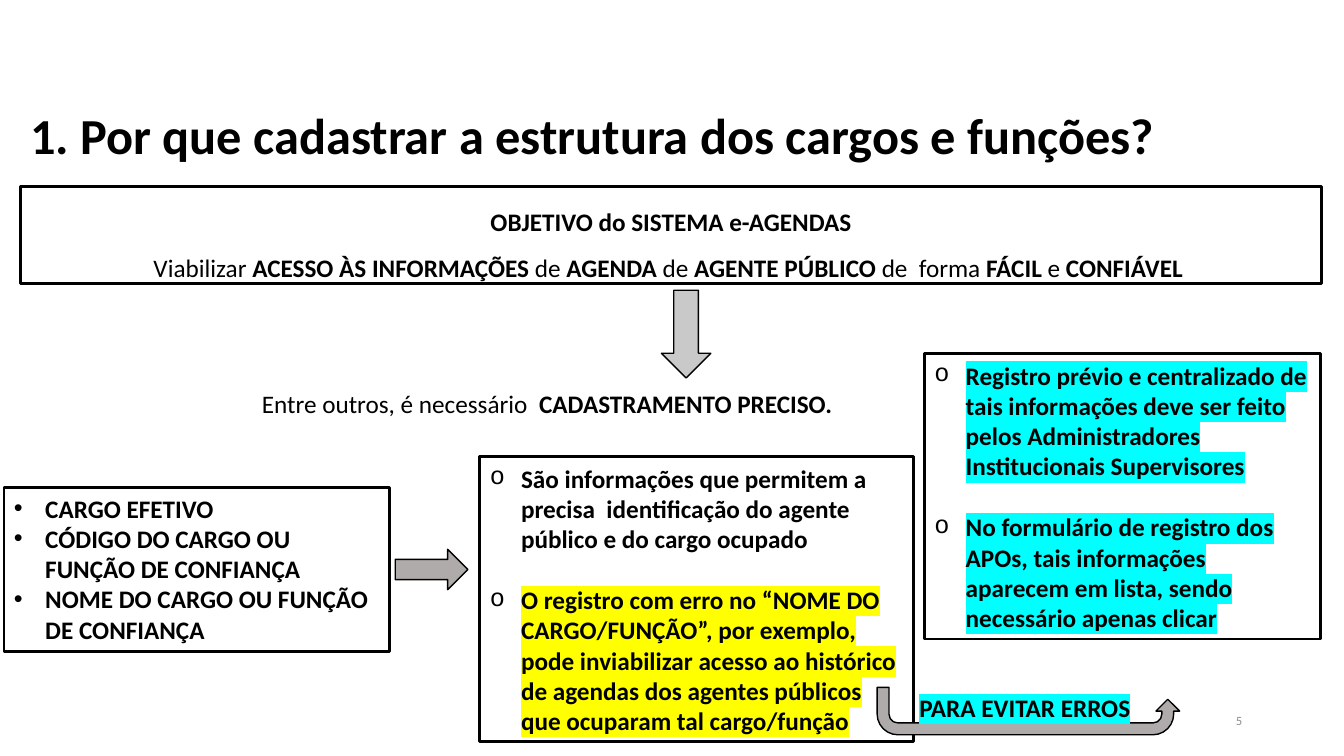
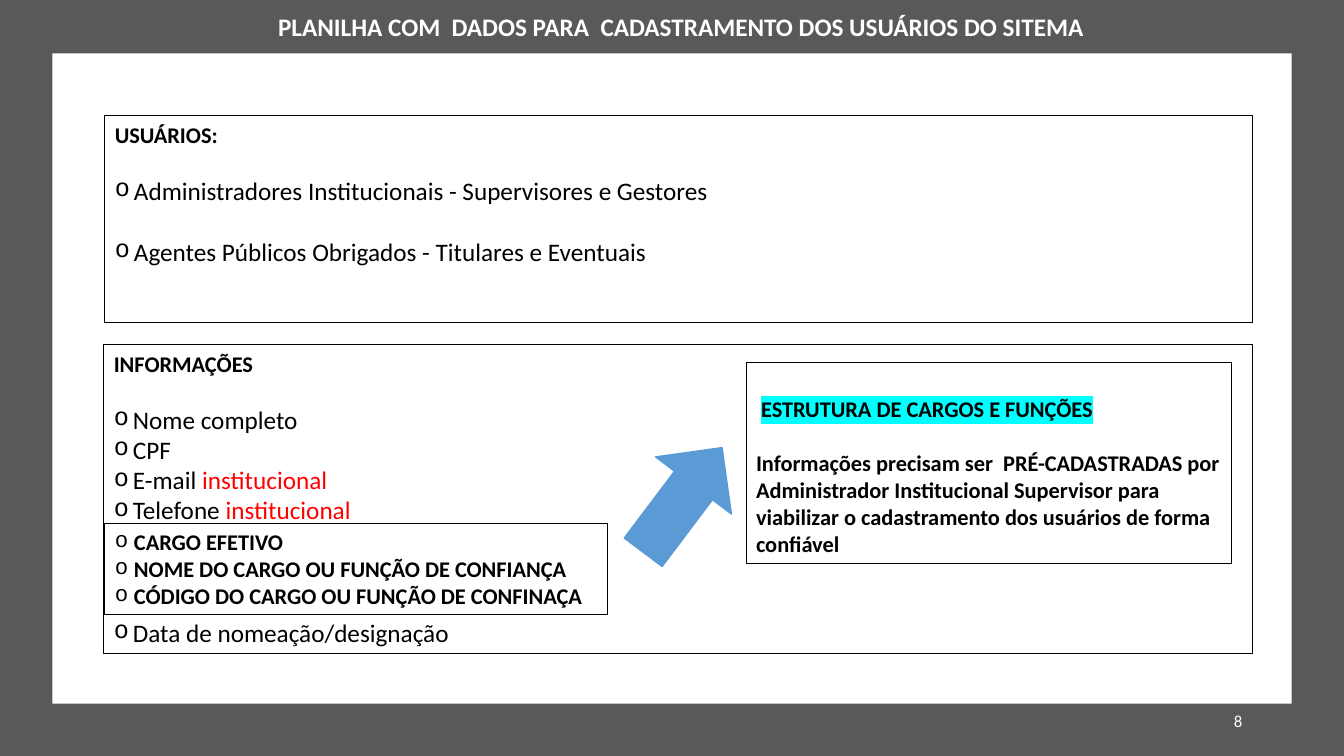
from lxml import etree
from pptx import Presentation
from pptx.dml.color import RGBColor
from pptx.enum.shapes import MSO_SHAPE
from pptx.enum.text import MSO_ANCHOR, PP_ALIGN
from pptx.oxml.ns import qn
from pptx.util import Inches, Pt

LEFT, CENTER, RIGHT = PP_ALIGN.LEFT, PP_ALIGN.CENTER, PP_ALIGN.RIGHT
TOP, MIDDLE = MSO_ANCHOR.TOP, MSO_ANCHOR.MIDDLE
RECTANGLE = MSO_SHAPE.RECTANGLE
DOWN_ARROW, RIGHT_ARROW, UTURN_ARROW = MSO_SHAPE.DOWN_ARROW, MSO_SHAPE.RIGHT_ARROW, MSO_SHAPE.U_TURN_ARROW

FONT = "Calibri"
BLACK, WHITE, RED = "000000", "FFFFFF", "FF0000"
YELLOW, CYAN = "FFFF00", "00FFFF"
DARK, LIGHT_GRAY, GRAY, NUMBER_GRAY, BLUE = "595959", "C9C9C9", "AFABAB", "8C8C8C", "5B9BD5"
THICK, THIN = 2, 0.75
WIDE_INDENT, NARROW_INDENT = 0.31, 0.19
LINE_16, LINE_18 = 19.5, 22
NUMBER_BOX = (9.42, 6.95, 3, 0.4)

BOLD = {"bold": True}
BOLD_16 = {"bold": True, "size": 16}
BOLD_CYAN = {"bold": True, "highlight": CYAN}
BOLD_YELLOW = {"bold": True, "highlight": YELLOW}


def line(*runs, **layout):
    return runs, layout


def bullet(*runs, mark="o", indent=NARROW_INDENT, **layout):
    return runs, {"mark": mark, "indent": indent, **layout}


OBJECTIVE = [
    line(("OBJETIVO do SISTEMA e-AGENDAS", BOLD), align=CENTER, spacing=1.5),
    line(("Viabilizar ", {}), ("ACESSO ÀS INFORMAÇÕES ", BOLD), ("de ", {}),
         ("AGENDA", BOLD), (" de ", {}), ("AGENTE PÚBLICO ", BOLD),
         ("de  forma ", {}), ("FÁCIL ", BOLD), ("e ", {}), ("CONFIÁVEL ", BOLD),
         align=CENTER, spacing=1.5),
]
NEED = [line(("Entre outros, é necessário  ", {}), ("CADASTRAMENTO PRECISO. ", BOLD), align=CENTER)]
POSITION_FIELDS = [
    bullet((text, BOLD), mark="•", indent=WIDE_INDENT)
    for text in ("CARGO EFETIVO", "CÓDIGO DO CARGO OU FUNÇÃO DE CONFIANÇA",
                 "NOME DO CARGO OU FUNÇÃO DE CONFIANÇA")
]
IDENTIFICATION = [
    bullet(("São informações que permitem a precisa  identificação do agente público e do cargo ocupado", BOLD),
           indent=WIDE_INDENT),
    bullet(("O registro com erro no “NOME DO CARGO/FUNÇÃO”, por exemplo, pode inviabilizar acesso ao "
            "histórico de agendas dos agentes públicos que ocuparam tal cargo/função", BOLD_YELLOW),
           indent=WIDE_INDENT, before=LINE_18),
]
REGISTRATION = [
    bullet(("Registro prévio e centralizado de tais informações deve ser feito pelos Administradores "
            "Institucionais Supervisores", BOLD_CYAN), indent=WIDE_INDENT),
    bullet(("No formulário de registro dos APOs, tais informações aparecem em lista, sendo necessário "
            "apenas clicar", BOLD_CYAN), indent=WIDE_INDENT, before=LINE_18),
]
AVOID_ERRORS = [line(("PARA EVITAR ERROS", BOLD_CYAN), align=CENTER)]

USERS = [
    line(("USUÁRIOS:", BOLD_16)),
    bullet(("Administradores Institucionais - Supervisores e Gestores", {}), before=LINE_16),
    bullet(("Agentes Públicos Obrigados - Titulares e Eventuais", {}), before=LINE_18),
]
INFORMATION = [
    line(("INFORMAÇÕES", BOLD_16)),
    bullet(("Nome completo", {}), before=LINE_16),
    bullet(("CPF", {})),
    bullet(("E-mail ", {}), ("institucional", {"color": RED})),
    bullet(("Telefone ", {}), ("institucional", {"color": RED})),
    bullet(("Data de nomeação/designação", {}), before=3 * LINE_18),
]
POSITION_DATA = [
    bullet((text, BOLD_16))
    for text in ("CARGO EFETIVO", "NOME DO CARGO OU FUNÇÃO DE CONFIANÇA",
                 "CÓDIGO DO CARGO OU FUNÇÃO DE CONFINAÇA")
]
STRUCTURE = [
    line(("ESTRUTURA DE CARGOS E FUNÇÕES", {**BOLD_16, "highlight": CYAN}), margin=0.05),
    line(("Informações precisam ser  PRÉ-CADASTRADAS por Administrador Institucional Supervisor para "
          "viabilizar o cadastramento dos usuários de forma confiável", BOLD_16), before=LINE_16),
]


def rgb(value):
    return RGBColor.from_string(value)


def box(position):
    return [Inches(value) for value in position]


def set_bullet(properties, mark, indent):
    properties.set("marL", str(Inches(indent)))
    properties.set("indent", str(-Inches(indent)))
    font = etree.SubElement(properties, qn("a:buFont"))
    font.set("typeface", "Courier New" if mark == "o" else "Arial")
    etree.SubElement(properties, qn("a:buChar")).set("char", mark)


def add_run(paragraph, text, size=18, bold=False, color=BLACK, highlight=None):
    run = paragraph.add_run()
    run.text = text
    run.font.size, run.font.bold = Pt(size), bold
    run.font.color.rgb = rgb(color)
    run.font.name = FONT
    if highlight:
        marker = etree.Element(qn("a:highlight"))
        etree.SubElement(marker, qn("a:srgbClr")).set("val", highlight)
        run.font._element.find(qn("a:solidFill")).addnext(marker)


def write(shape, lines, anchor=TOP, wrap=True, top_margin=0.05):
    frame = shape.text_frame
    frame.word_wrap, frame.vertical_anchor = wrap, anchor
    frame.margin_top = Inches(top_margin)
    for index, (runs, layout) in enumerate(lines):
        paragraph = frame.add_paragraph() if index else frame.paragraphs[0]
        properties = paragraph._p.get_or_add_pPr()
        if "mark" in layout:
            set_bullet(properties, layout["mark"], layout["indent"])
        if "margin" in layout:
            properties.set("marL", str(Inches(layout["margin"])))
        paragraph.alignment = layout.get("align", LEFT)
        if "spacing" in layout:
            paragraph.line_spacing = layout["spacing"]
        if "before" in layout:
            paragraph.space_before = Pt(layout["before"])
        for text, style in runs:
            add_run(paragraph, text, **style)


def add_figure(slide, kind, position, fill=None, outline=None, width=1):
    shape = slide.shapes.add_shape(kind, *box(position))
    shape.shadow.inherit = False
    if fill:
        shape.fill.solid()
        shape.fill.fore_color.rgb = rgb(fill)
    else:
        shape.fill.background()
    if outline:
        shape.line.color.rgb = rgb(outline)
        shape.line.width = Pt(width)
    else:
        shape.line.fill.background()
    return shape


def add_panel(slide, position, lines, width, **options):
    write(add_figure(slide, RECTANGLE, position, outline=BLACK, width=width), lines, **options)


def add_text(slide, position, lines, **options):
    write(slide.shapes.add_textbox(*box(position)), lines, **options)


def add_number(slide, number, size, color):
    add_text(slide, NUMBER_BOX, [line((number, {"size": size, "color": color}), align=RIGHT)], anchor=MIDDLE)


def build_reasons(slide):
    add_number(slide, "5", 9, NUMBER_GRAY)
    add_panel(slide, (0.2, 1.85, 12.91, 0.96), OBJECTIVE, THICK)
    title = ("1. Por que cadastrar a estrutura dos cargos e funções?", {"size": 36, "bold": True})
    add_text(slide, (0.2, 1.07, 11.54, 0.6), [line(title, spacing=0.9)], anchor=MIDDLE)
    add_text(slide, (1.49, 3.8, 7.93, 0.4), NEED)
    add_panel(slide, (0.04, 4.84, 3.82, 1.62), POSITION_FIELDS, THICK)
    add_figure(slide, DOWN_ARROW, (6.56, 2.88, 0.49, 0.87), LIGHT_GRAY, BLACK)
    add_panel(slide, (4.76, 4.53, 4.3, 2.83), IDENTIFICATION, THICK, anchor=MIDDLE)
    add_figure(slide, RIGHT_ARROW, (3.92, 5.45, 0.72, 0.4), GRAY, BLACK)
    return_arrow = add_figure(slide, UTURN_ARROW, (8.7, 6.82, 3, 0.47), GRAY, BLACK)
    return_arrow._element.spPr.xfrm.set("flipV", "1")
    add_panel(slide, (9.17, 3.51, 3.93, 2.83), REGISTRATION, THICK, anchor=MIDDLE)
    add_text(slide, (8.33, 6.82, 3.67, 0.4), AVOID_ERRORS)


def build_user_sheet(slide):
    add_figure(slide, RECTANGLE, (0, 0, 13.33, 7.5), DARK)
    add_figure(slide, RECTANGLE, (0.52, 0.53, 12.29, 6.45), WHITE)
    add_number(slide, "8", 12, WHITE)
    title = ("PLANILHA COM  DADOS PARA  CADASTRAMENTO DOS USUÁRIOS DO SITEMA", {"bold": True, "color": WHITE})
    add_text(slide, (2.66, 0.06, 8.27, 0.4), [line(title)], wrap=False)
    add_panel(slide, (1.04, 1.15, 11.38, 2.05), USERS, THIN)
    add_panel(slide, (1.03, 3.42, 11.39, 3.06), INFORMATION, THIN)
    add_panel(slide, (1.04, 5.19, 4.99, 0.91), POSITION_DATA, THIN)
    add_figure(slide, DOWN_ARROW, (6.3, 4.31, 0.94, 1.3), BLUE, BLUE).rotation = 217
    add_panel(slide, (7.4, 3.6, 4.81, 1.99), STRUCTURE, THIN, top_margin=0.32)


def main():
    presentation = Presentation()
    presentation.slide_width, presentation.slide_height = Inches(13.33), Inches(7.5)
    blank = presentation.slide_layouts[6]
    for build in (build_reasons, build_user_sheet):
        build(presentation.slides.add_slide(blank))
    presentation.save("out.pptx")


if __name__ == "__main__":
    main()
